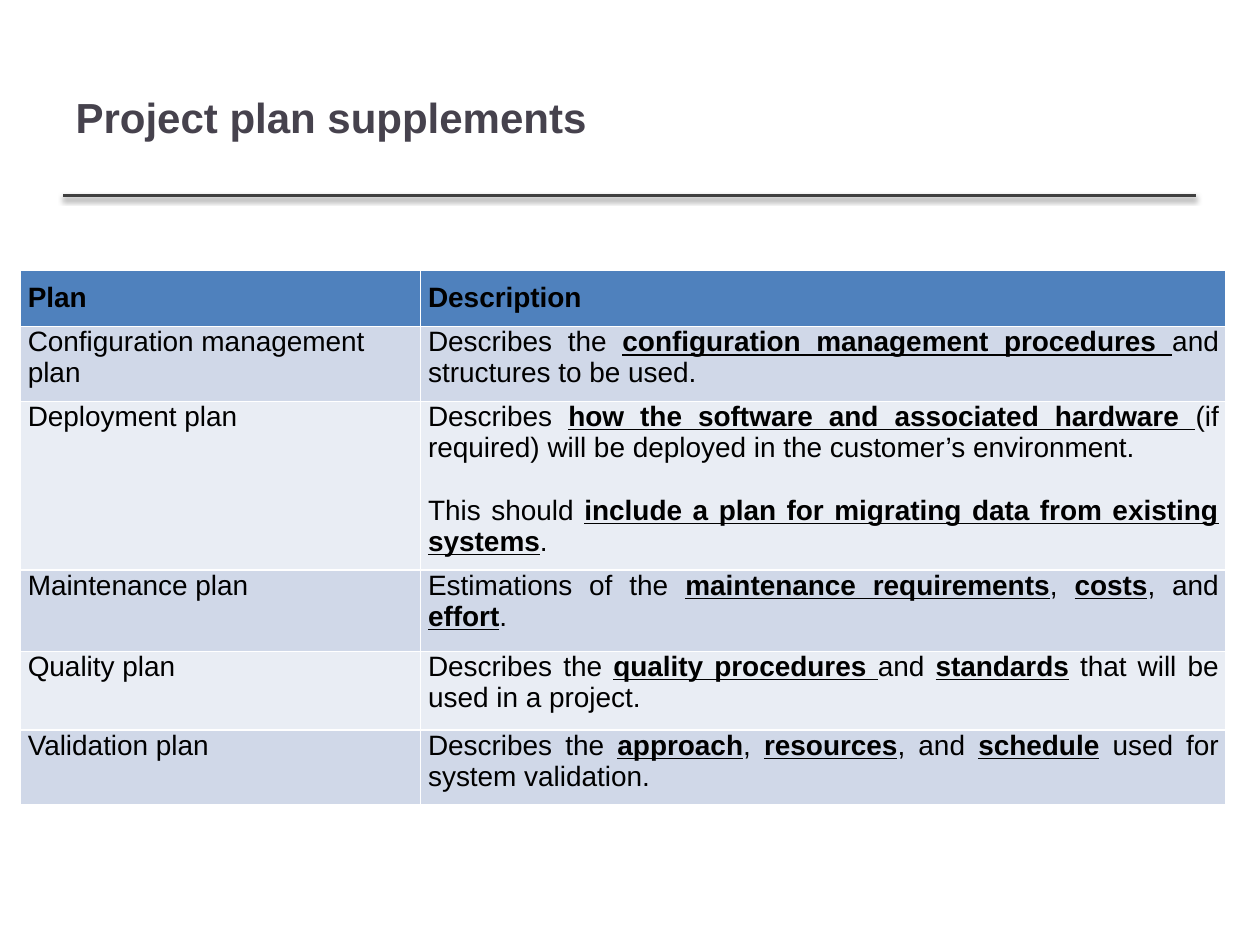
from dataclasses import dataclass

from lxml import etree
from pptx import Presentation
from pptx.dml.color import RGBColor
from pptx.enum.shapes import MSO_CONNECTOR
from pptx.enum.text import MSO_ANCHOR, PP_ALIGN
from pptx.oxml import parse_xml
from pptx.util import Cm, Pt

STRAIGHT = MSO_CONNECTOR.STRAIGHT
MIDDLE, TOP = MSO_ANCHOR.MIDDLE, MSO_ANCHOR.TOP
LEFT, JUSTIFY = PP_ALIGN.LEFT, PP_ALIGN.JUSTIFY
TITLE_ONLY = 5


@dataclass(frozen=True)
class Theme:
    font: str = "Arial"
    title: str = "46424D"
    text: str = "000000"
    rule: str = "404040"
    header: str = "4F81BD"
    bands: tuple = ("D0D8E8", "E9EDF4")
    title_size: int = 24
    text_size: int = 16
    paragraph_gap: int = 18


THEME = Theme()

HEADER = ("Plan", "Description")
PLANS = [
    ("Configuration management plan",
     ["Describes the **configuration management procedures **and structures to be used."]),
    ("Deployment plan",
     ["Describes **how the software and associated hardware **(if required) "
      "will be deployed in the customer’s environment.",
      "This should **include a plan for migrating data from existing systems**."]),
    ("Maintenance plan",
     ["Estimations of the **maintenance requirements**, **costs**, and **effort**."]),
    ("Quality plan",
     ["Describes the **quality procedures **and **standards** that will be used in a project."]),
    ("Validation plan",
     ["Describes the **approach**, **resources**, and **schedule** used for system validation."]),
]
COLUMN_SHARES = (0.332, 0.668)
ROW_HEIGHTS = (1.14, 1.51, 3.4, 1.64, 1.59, 1.49)

SHADOW = """
<a:effectLst xmlns:a="http://schemas.openxmlformats.org/drawingml/2006/main">
  <a:outerShdw blurRad="39400" dist="20300" dir="5400000" rotWithShape="0">
    <a:srgbClr val="000000"><a:alpha val="38000"/></a:srgbClr>
  </a:outerShdw>
</a:effectLst>"""


def style_run(r, size, color, bold=False):
    r.font.name = THEME.font
    r.font.size = Pt(size)
    r.font.bold = bold
    r.font.color.rgb = RGBColor.from_string(color)


def add_title(slide, text, left, top, width, height):
    sp = slide.shapes.title
    sp.left, sp.top, sp.width, sp.height = Cm(left), Cm(top), Cm(width), Cm(height)
    tf = sp.text_frame
    tf.text = text
    tf.vertical_anchor = MIDDLE
    p = tf.paragraphs[0]
    p.alignment = LEFT
    style_run(p.runs[0], THEME.title_size, THEME.title, bold=True)


def add_rule(slide, left, top, width):
    line = slide.shapes.add_connector(
        STRAIGHT, Cm(left), Cm(top), Cm(left + width), Cm(top))
    line.line.color.rgb = RGBColor.from_string(THEME.rule)
    line.line.width = Pt(2)
    line._element.spPr.append(parse_xml(etree.tostring(etree.fromstring(SHADOW))))


def fill_cell(cell, paragraphs, fill, alignment, header=False):
    cell.fill.solid()
    cell.fill.fore_color.rgb = RGBColor.from_string(fill)
    cell.margin_left = cell.margin_right = Cm(0.15)
    cell.margin_top = Cm(0.25 if header else 0)
    cell.margin_bottom = Cm(0.25)
    cell.vertical_anchor = TOP
    tf = cell.text_frame
    for i, text in enumerate(paragraphs):
        p = tf.add_paragraph() if i else tf.paragraphs[0]
        p.alignment = alignment
        if i:
            p.space_before = Pt(THEME.paragraph_gap)
        for j, part in enumerate(text.split("**")):
            key_phrase = j % 2 == 1
            r = p.add_run()
            r.text = part
            style_run(r, THEME.text_size, THEME.text, header or key_phrase)
            r.font.underline = key_phrase


def add_plan_table(slide, left, top, width):
    table = slide.shapes.add_table(
        len(PLANS) + 1, len(HEADER), Cm(left), Cm(top),
        Cm(width), Cm(sum(ROW_HEIGHTS))).table
    for column, share in zip(table.columns, COLUMN_SHARES):
        column.width = Cm(width * share)
    for row, height in zip(table.rows, ROW_HEIGHTS):
        row.height = Cm(height)
    for col, heading in enumerate(HEADER):
        fill_cell(table.cell(0, col), [heading], THEME.header, JUSTIFY, header=True)
    for row, (plan, description) in enumerate(PLANS, start=1):
        band = THEME.bands[(row - 1) % 2]
        fill_cell(table.cell(row, 0), [plan], band, LEFT)
        fill_cell(table.cell(row, 1), description, band, JUSTIFY)


def main():
    prs = Presentation()
    prs.slide_width, prs.slide_height = Cm(25.4), Cm(19.05)
    slide = prs.slides.add_slide(prs.slide_layouts[TITLE_ONLY])
    add_rule(slide, 1.27, 3.94, 22.83)
    add_title(slide, "Project plan supplements", 1.27, 0.76, 20.27, 3.18)
    add_plan_table(slide, 0.41, 5.44, 24.31)
    prs.save("out.pptx")


if __name__ == "__main__":
    main()
